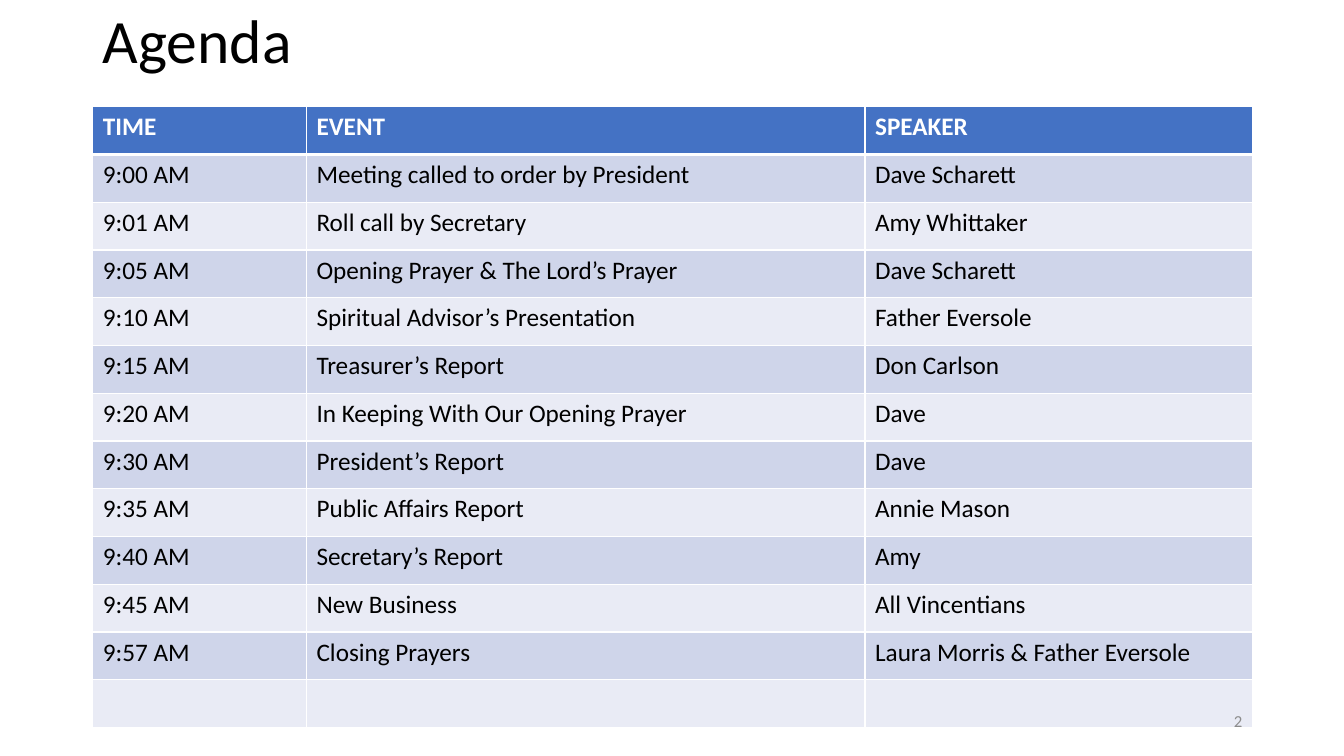
from lxml import etree
from pptx import Presentation
from pptx.dml.color import RGBColor
from pptx.enum.text import MSO_ANCHOR, PP_ALIGN
from pptx.oxml.ns import qn
from pptx.util import Inches, Pt

MID = MSO_ANCHOR.MIDDLE
LEFT, RIGHT = PP_ALIGN.LEFT, PP_ALIGN.RIGHT

WHITE, BLACK, GREY = "FFFFFF", "000000", "8C8C8C"
BLUE = "4472C4"
BANDS = ("CFD5EA", "E9EBF5")

WIDTHS = (2.12, 5.54, 3.84)
AGENDA = (
    ("TIME", "EVENT", "SPEAKER"),
    ("9:00 AM", "Meeting called to order by President", "Dave Scharett"),
    ("9:01 AM", "Roll call by Secretary", "Amy Whittaker"),
    ("9:05 AM", "Opening Prayer & The Lord’s Prayer", "Dave Scharett"),
    ("9:10 AM", "Spiritual Advisor’s Presentation", "Father Eversole"),
    ("9:15 AM", "Treasurer’s Report", "Don Carlson"),
    ("9:20 AM", "In Keeping With Our Opening Prayer", "Dave"),
    ("9:30 AM", "President’s Report", "Dave"),
    ("9:35 AM", "Public Affairs Report", "Annie Mason"),
    ("9:40 AM", "Secretary’s Report", "Amy"),
    ("9:45 AM", "New Business", "All Vincentians"),
    ("9:57 AM", "Closing Prayers", "Laura Morris & Father Eversole"),
    ("", "", ""),
)


def rgb(color):
    return RGBColor.from_string(color)


class Deck:
    """Holds the font and the current slide, and draws on it."""

    def __init__(self, slide, font):
        self.slide = slide
        self.font = font

    def run(self, para, text, size, color, bold=False):
        run = para.add_run()
        run.text = text
        font = run.font
        font.name, font.size, font.bold = self.font, Pt(size), bold
        font.color.rgb = rgb(color)

    def text(self, box, text, size, color, align=LEFT, space=1.0):
        frame = self.slide.shapes.add_textbox(*map(Inches, box)).text_frame
        frame.word_wrap = True
        frame.vertical_anchor = MID
        para = frame.paragraphs[0]
        para.alignment = align
        para.line_spacing = space
        self.run(para, text, size, color)

    def edge(self, cell, side, width):
        """Draw a white border on one side (L, R, T or B) of a cell."""
        props = cell._tc.get_or_add_tcPr()
        line = etree.SubElement(props, qn("a:ln" + side), w=str(Pt(width)))
        fill = etree.SubElement(line, qn("a:solidFill"))
        etree.SubElement(fill, qn("a:srgbClr"), val=WHITE)

    def table(self, box, widths, rows, size):
        """Draw a banded table whose first row is the header."""
        grid = self.slide.shapes.add_table(
            len(rows), len(widths), *map(Inches, box)).table
        for col, width in zip(grid.columns, widths):
            col.width = Inches(width)
        for r, row in enumerate(rows):
            grid.rows[r].height = Inches(box[3] / len(rows))
            head = r == 0
            for c, text in enumerate(row):
                cell = grid.cell(r, c)
                top, base = 3 if r == 1 else 1, 3 if head else 1
                for side, width in zip("LRTB", (1, 1, top, base)):
                    self.edge(cell, side, width)
                cell.fill.solid()
                cell.fill.fore_color.rgb = rgb(
                    BLUE if head else BANDS[(r - 1) % 2])
                if text:
                    self.run(cell.text_frame.paragraphs[0], text, size,
                             WHITE if head else BLACK, head)


def main():
    prs = Presentation()
    prs.slide_width, prs.slide_height = Inches(13.33), Inches(7.5)
    deck = Deck(prs.slides.add_slide(prs.slide_layouts[6]), "Calibri")
    deck.text((0.92, 0.01, 11.5, 0.85), "Agenda", 44, BLACK, space=0.9)
    deck.table((0.92, 1.06, 11.5, 6.16), WIDTHS, AGENDA, 18)
    deck.text((9.42, 6.95, 3, 0.4), "2", 12, GREY, RIGHT)
    prs.save("out.pptx")


if __name__ == "__main__":
    main()
